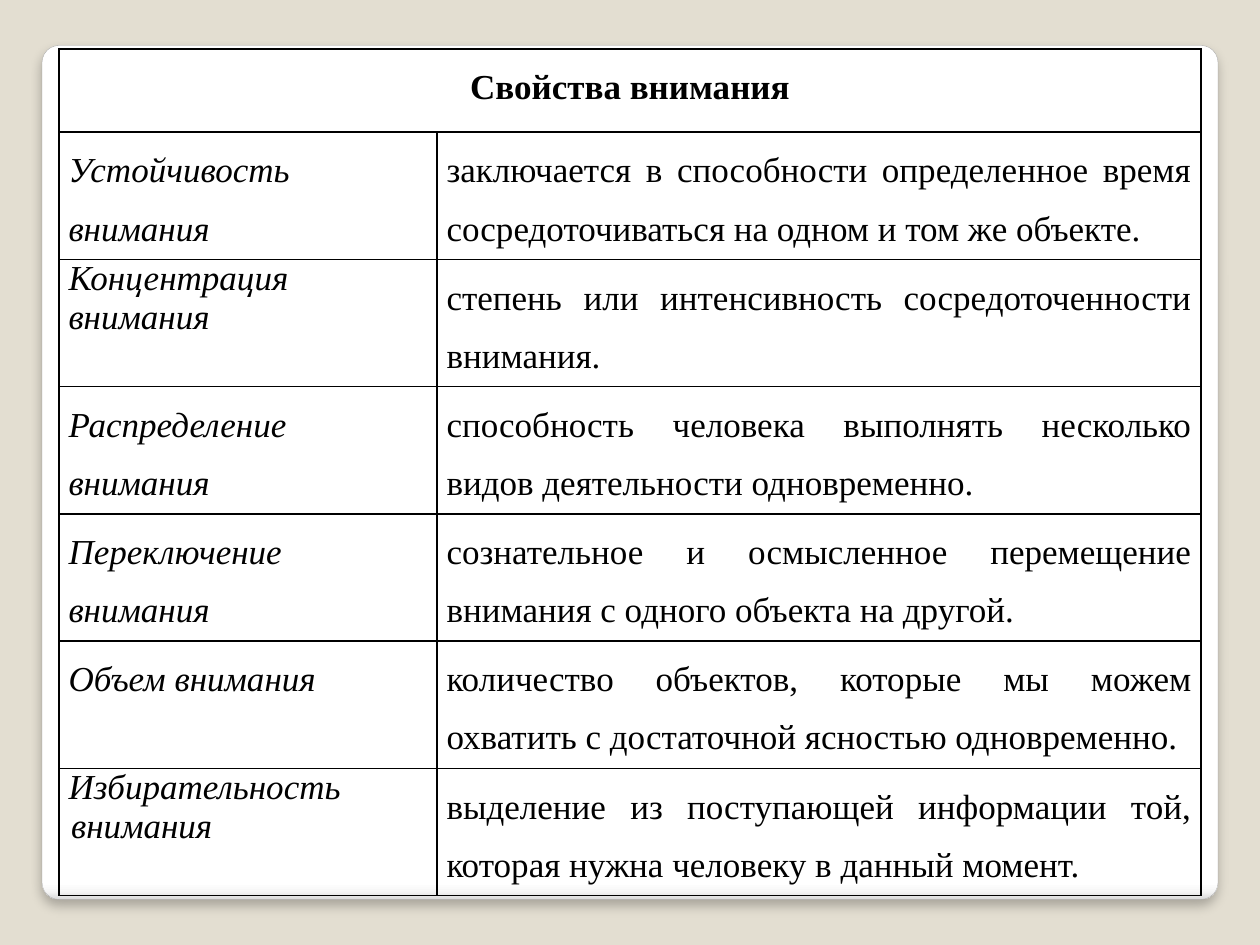
"""Build a one-slide table of the properties of attention."""
import dataclasses

import lxml.etree
import pptx
import pptx.dml.color
import pptx.enum.shapes
import pptx.enum.text
import pptx.oxml.ns
import pptx.util

Pt = pptx.util.Pt
ALIGN = pptx.enum.text.PP_ALIGN


@dataclasses.dataclass(frozen=True)
class Theme:
    background: str = "E3DED1"
    ink: str = "000000"
    panel_line: str = "A4A4A4"
    panel_stops: tuple = ((0, "FFFFFF"), (98, "FFFFFF"), (99, "F7F7F7"), (100, "DADADA"))
    font: str = "Times New Roman"
    text_size: float = 20


def rgb(value):
    return pptx.dml.color.RGBColor.from_string(value)


def add_node(parent, tag, **attributes):
    node = lxml.etree.SubElement(parent, pptx.oxml.ns.qn(tag))
    for name, value in attributes.items():
        node.set(name, str(value))
    return node


def write_text(frame, text, theme, align=ALIGN.JUSTIFY, spacing=1.5, hanging=0, bold=False, italic=False):
    paragraph = frame.paragraphs[0]
    paragraph.alignment = align
    paragraph.line_spacing = spacing
    if hanging:
        properties = paragraph._p.get_or_add_pPr()
        properties.set("marL", str(Pt(hanging)))
        properties.set("indent", str(-Pt(hanging)))
    run = paragraph.add_run()
    run.text = text
    font = run.font
    font.name, font.size = theme.font, Pt(theme.text_size)
    font.bold, font.italic = bold, italic
    font.color.rgb = rgb(theme.ink)


class SlideBuilder:
    def __init__(self, slide, theme):
        self.slide, self.theme = slide, theme
        slide.background.fill.solid()
        slide.background.fill.fore_color.rgb = rgb(theme.background)

    def panel(self, left, top, width, height, corner):
        panel = self.slide.shapes.add_shape(
            pptx.enum.shapes.MSO_SHAPE.ROUNDED_RECTANGLE, Pt(left), Pt(top), Pt(width), Pt(height))
        panel.adjustments[0] = corner
        panel.line.color.rgb = rgb(self.theme.panel_line)
        panel.line.width = Pt(0.16)
        panel.fill.gradient()
        panel.fill.gradient_angle = 270
        properties = panel._element.spPr
        stops = properties.find(".//" + pptx.oxml.ns.qn("a:gsLst"))
        for stop in list(stops):
            stops.remove(stop)
        for position, color in self.theme.panel_stops:
            add_node(add_node(stops, "a:gs", pos=position * 1000), "a:srgbClr", val=color)
        panel.shadow.inherit = False
        shadow = add_node(properties.find(pptx.oxml.ns.qn("a:effectLst")), "a:outerShdw",
                          blurRad=Pt(6), dist=Pt(4), dir=90 * 60000, algn="t", rotWithShape=0)
        add_node(add_node(shadow, "a:srgbClr", val=self.theme.ink), "a:alpha", val=25000)

    def style_cell(self, cell):
        cell.margin_left = cell.margin_right = Pt(5.4)
        cell.margin_top = cell.margin_bottom = 0
        properties = cell._tc.get_or_add_tcPr()
        for side in ("a:lnL", "a:lnR", "a:lnT", "a:lnB"):
            border = add_node(properties, side, w=Pt(1))
            add_node(add_node(border, "a:solidFill"), "a:srgbClr", val=self.theme.ink)
        cell.fill.background()

    def table(self, left, top, widths, heights):
        table = self.slide.shapes.add_table(
            len(heights), len(widths), Pt(left), Pt(top), Pt(sum(widths)), Pt(sum(heights))).table
        table.first_row = table.horz_banding = False
        for column, width in zip(table.columns, widths):
            column.width = Pt(width)
        for row, height in zip(table.rows, heights):
            row.height = Pt(height)
        for cell in table.iter_cells():
            self.style_cell(cell)
        return table

    def text(self, cell, text, **style):
        write_text(cell.text_frame, text, self.theme, **style)


TITLE = "Свойства внимания"
COMPACT = {"spacing": 1}
PROPERTIES = (
    ("Устойчивость внимания",
     "заключается в способности определенное время сосредоточиваться на одном и том же объекте.", {}),
    ("Концентрация внимания",
     "степень или интенсивность сосредоточенности внимания.", COMPACT),
    ("Распределение внимания",
     "способность человека выполнять несколько видов деятельности одновременно.", {}),
    ("Переключение внимания",
     "сознательное и осмысленное перемещение внимания с одного объекта на другой.", {}),
    ("Объем внимания",
     "количество объектов, которые мы можем охватить с достаточной ясностью одновременно.", {}),
    ("Избирательность внимания",
     "выделение из поступающей информации той, которая нужна человеку в данный момент.",
     {**COMPACT, "hanging": 1.5}),
)


def main():
    presentation = pptx.Presentation()
    presentation.slide_width, presentation.slide_height = Pt(720), Pt(540)
    slide = presentation.slides.add_slide(presentation.slide_layouts[6])
    builder = SlideBuilder(slide, Theme())
    builder.panel(24, 26, 672, 488, corner=0.02)
    table = builder.table(33.75, 28, (216, 436.5), (47.5,) + (72.72,) * len(PROPERTIES))
    table.cell(0, 0).merge(table.cell(0, 1))
    builder.text(table.cell(0, 0), TITLE, align=ALIGN.CENTER, bold=True)
    for row, (term, definition, term_style) in enumerate(PROPERTIES, start=1):
        builder.text(table.cell(row, 0), term, italic=True, **term_style)
        builder.text(table.cell(row, 1), definition)
    presentation.save("out.pptx")


if __name__ == "__main__":
    main()
